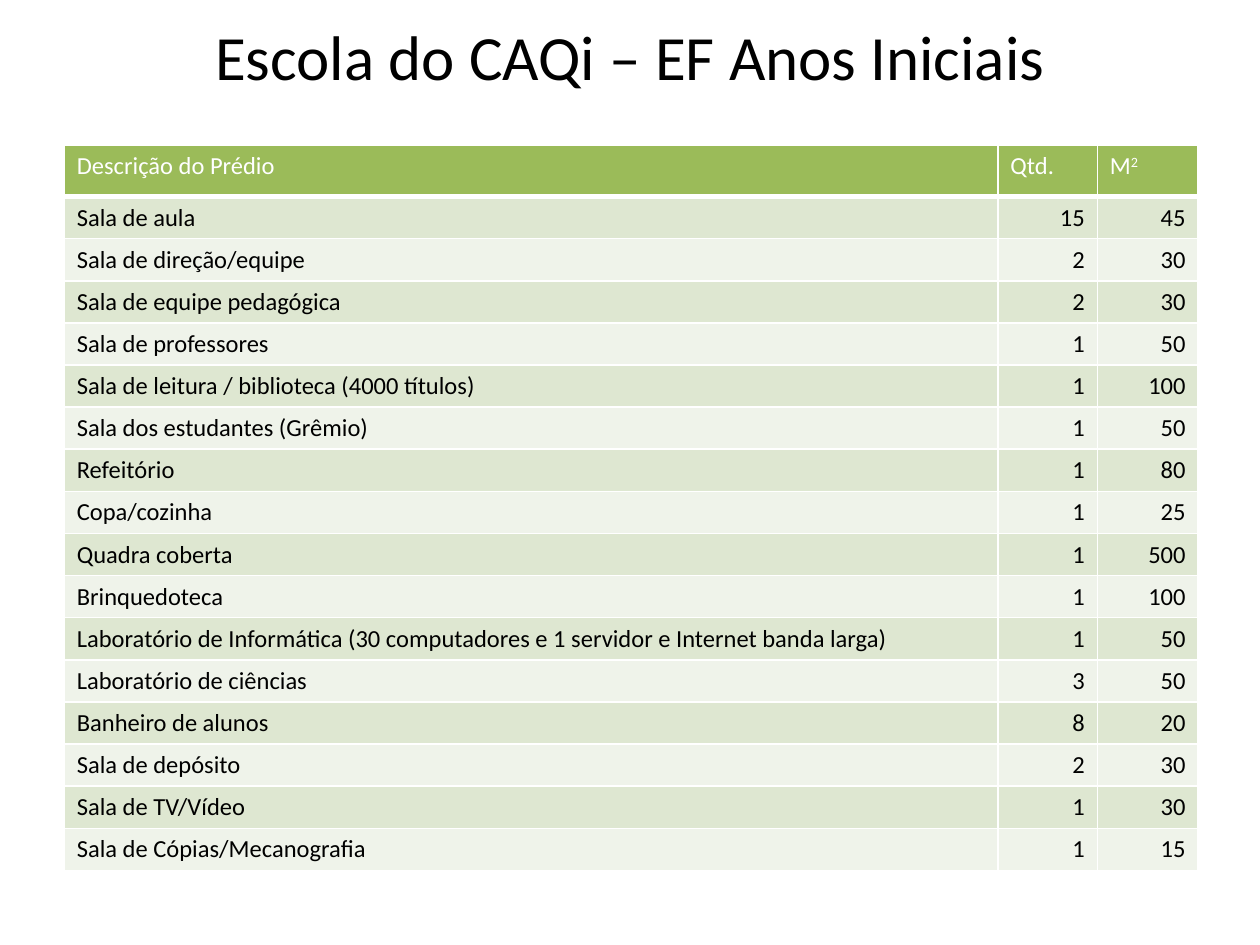
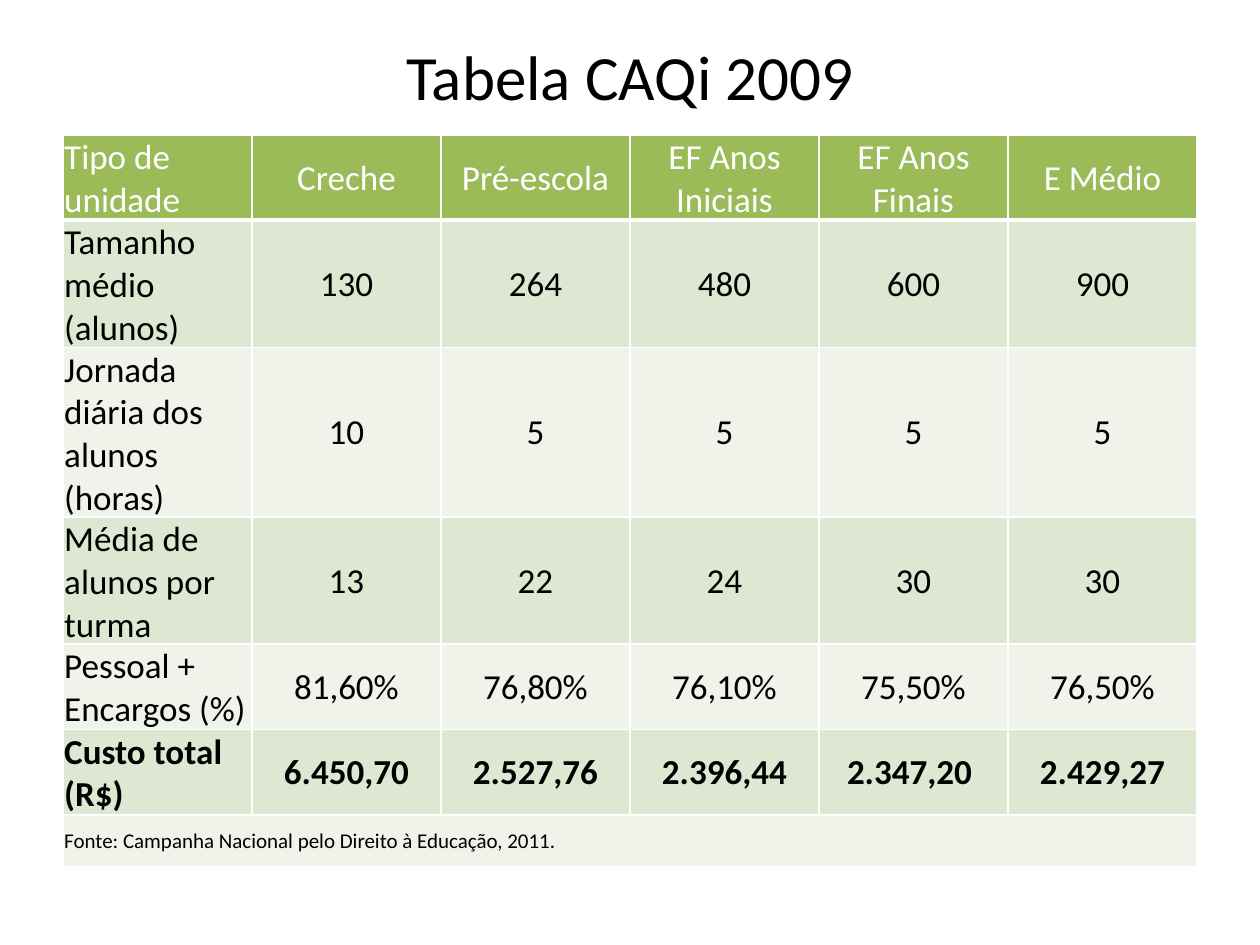
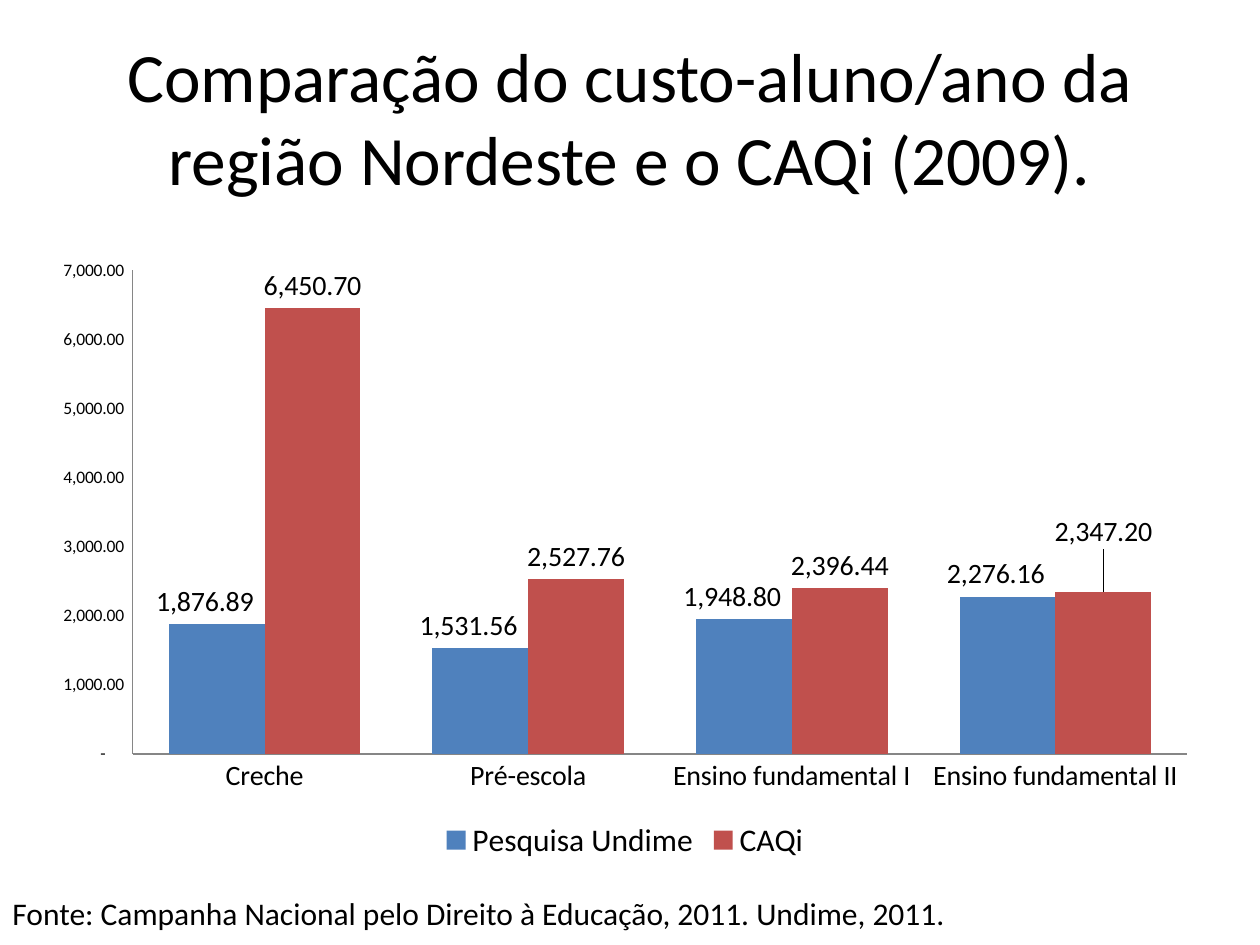
from dataclasses import dataclass

from lxml.etree import SubElement
from pptx import Presentation
from pptx.chart.data import CategoryChartData
from pptx.dml.color import RGBColor
from pptx.enum.chart import XL_CHART_TYPE, XL_LABEL_POSITION, XL_LEGEND_POSITION, XL_TICK_MARK
from pptx.enum.text import MSO_ANCHOR, PP_ALIGN
from pptx.oxml import parse_xml
from pptx.oxml.ns import nsdecls, qn
from pptx.util import Inches, Pt


@dataclass(frozen=True)
class Theme:
    font: str = "Calibri"
    text: str = "000000"
    white: str = "FFFFFF"
    header: str = "9BBB59"
    bands: tuple = ("DEE7D1", "EFF3EA")
    series: tuple = ("4F81BD", "C0504D")
    axis: str = "868686"
    title_size: float = 36
    long_title_size: float = 39.6
    rooms_size: float = 14
    costs_size: float = 20
    source_size: float = 12
    axis_size: float = 10
    label_size: float = 16
    caption_size: float = 18


THEME = Theme()
MONEY = '_(* #,##0.00_);_(* \\(#,##0.00\\);_(* "-"??_);_(@_)'

ROOMS = [
    ("Descrição do Prédio", "Qtd.", "M"),
    ("Sala de aula", "15", "45"),
    ("Sala de direção/equipe", "2", "30"),
    ("Sala de equipe pedagógica", "2", "30"),
    ("Sala de professores", "1", "50"),
    ("Sala de leitura / biblioteca (4000 títulos)", "1", "100"),
    ("Sala dos estudantes (Grêmio)", "1", "50"),
    ("Refeitório", "1", "80"),
    ("Copa/cozinha", "1", "25"),
    ("Quadra coberta", "1", "500"),
    ("Brinquedoteca", "1", "100"),
    ("Laboratório de Informática (30 computadores e 1 servidor e Internet banda larga)", "1", "50"),
    ("Laboratório de ciências", "3", "50"),
    ("Banheiro de alunos", "8", "20"),
    ("Sala de depósito", "2", "30"),
    ("Sala de TV/Vídeo", "1", "30"),
    ("Sala de Cópias/Mecanografia", "1", "15"),
]

COSTS = [
    ("Tipo de unidade", "Creche", "Pré-escola", "EF Anos Iniciais", "EF Anos Finais", "E Médio"),
    ("Tamanho médio (alunos)", "130", "264", "480", "600", "900"),
    ("Jornada diária dos alunos (horas)", "10", "5", "5", "5", "5"),
    ("Média de alunos por turma", "13", "22", "24", "30", "30"),
    ("Pessoal + Encargos (%)", "81,60%", "76,80%", "76,10%", "75,50%", "76,50%"),
    ("Custo total (R$)", "6.450,70", "2.527,76", "2.396,44", "2.347,20 ", "2.429,27"),
    ("Fonte: Campanha Nacional pelo Direito à Educação, 2011.", "", "", "", "", ""),
]

LEVELS = ("Creche", "Pré-escola", "Ensino fundamental I", "Ensino fundamental II")
COST_PER_PUPIL = {
    "Pesquisa Undime": (1876.89, 1531.56, 1948.8, 2276.16),
    "CAQi": (6450.7, 2527.76, 2396.44, 2347.2),
}
# Label shifts as fractions of the chart, by series and level
LABEL_SHIFTS = [
    {level: (-0.01, 0) for level in range(len(LEVELS))},
    {3: (0, -0.06)},
]


def style_font(font, size, color=THEME.text, bold=False):
    font.name = THEME.font
    font.size = Pt(size)
    font.bold = bold
    font.color.rgb = RGBColor.from_string(color)


def add_text(slide, text, box, size, align=PP_ALIGN.LEFT, anchor=MSO_ANCHOR.TOP):
    frame = slide.shapes.add_textbox(*map(Inches, box)).text_frame
    frame.word_wrap = True
    frame.vertical_anchor = anchor
    paragraph = frame.paragraphs[0]
    paragraph.text = text
    paragraph.alignment = align
    style_font(paragraph.font, size)


def add_title(slide, text, top, size=THEME.title_size):
    add_text(slide, text, (0.5, top, 9, 1.25), size, PP_ALIGN.CENTER, MSO_ANCHOR.MIDDLE)


def set_borders(cell, bottom_width):
    properties = cell._tc.get_or_add_tcPr()
    widths = {"lnL": 1, "lnR": 1, "lnT": 1, "lnB": bottom_width}
    for position, (side, width) in enumerate(widths.items()):
        properties.insert(position, parse_xml(
            f'<a:{side} {nsdecls("a")} w="{Pt(width)}"><a:solidFill>'
            f'<a:srgbClr val="{THEME.white}"/></a:solidFill></a:{side}>'))


def style_cell(cell, row, size, align, anchor, margins):
    is_header = row == 0
    cell.fill.solid()
    cell.fill.fore_color.rgb = RGBColor.from_string(
        THEME.header if is_header else THEME.bands[(row - 1) % 2])
    set_borders(cell, 3 if is_header else 1)
    cell.vertical_anchor = anchor
    cell.margin_left, cell.margin_top, cell.margin_right, cell.margin_bottom = map(Inches, margins)
    paragraph = cell.text_frame.paragraphs[0]
    paragraph.alignment = align
    style_font(paragraph.font, size, THEME.white if is_header else THEME.text)


def add_banded_table(slide, rows, corner, widths, heights, size, header_align, value_align,
                     anchor, margins):
    """Add a table whose first column is left-aligned text and the others values."""
    table = slide.shapes.add_table(
        len(rows), len(widths), *map(Inches, (*corner, sum(widths), sum(heights)))).table
    table.first_row = table.horz_banding = False
    for column, width in zip(table.columns, widths):
        column.width = Inches(width)
    for row, (texts, height) in enumerate(zip(rows, heights)):
        table.rows[row].height = Inches(height)
        for column, text in enumerate(texts):
            cell = table.cell(row, column)
            cell.text = text
            align = PP_ALIGN.LEFT if column == 0 else value_align if row else header_align
            style_cell(cell, row, size, align, anchor, margins)
    return table


def add_superscript(paragraph, text):
    run = paragraph.add_run()
    run.text = text
    run._r.get_or_add_rPr().set("baseline", "30000")


def set_layout(layout, **settings):
    manual = SubElement(layout, qn("c:manualLayout"))
    for tag, value in settings.items():
        SubElement(manual, qn(f"c:{tag}")).set("val", str(value))


def new_layout():
    return parse_xml(f'<c:layout {nsdecls("c")}/>')


def place_plot(chart):
    plot_area = chart.element.find(f".//{qn('c:plotArea')}")
    for automatic in plot_area.findall(qn("c:layout")):
        plot_area.remove(automatic)
    layout = new_layout()
    plot_area.insert(0, layout)
    set_layout(layout, layoutTarget="inner", xMode="edge", yMode="edge",
               x=0.08, y=0.04, w=0.9, h=0.78)


def label_series(series, shifts):
    labels = series.data_labels
    labels.show_value = True
    labels.number_format = MONEY
    labels.number_format_is_linked = False
    labels.position = XL_LABEL_POSITION.OUTSIDE_END
    style_font(labels.font, THEME.label_size)
    for level in shifts:
        label = series.points[level].data_label
        style_font(label.font, THEME.label_size)
        label.position = XL_LABEL_POSITION.OUTSIDE_END


def shift_labels(chart):
    for series, shifts in zip(chart.element.iter(qn("c:ser")), LABEL_SHIFTS):
        for label, (x, y) in zip(series.iter(qn("c:dLbl")), shifts.values()):
            layout = new_layout()
            label.insert(1, layout)
            set_layout(layout, x=x, y=y)


def style_axis(axis, size):
    axis.has_major_gridlines = False
    axis.major_tick_mark = axis.minor_tick_mark = XL_TICK_MARK.NONE
    axis.format.line.color.rgb = RGBColor.from_string(THEME.axis)
    style_font(axis.tick_labels.font, size)


def add_cost_chart(slide):
    data = CategoryChartData(number_format=MONEY)
    data.categories = LEVELS
    for name, values in COST_PER_PUPIL.items():
        data.add_series(name, values)
    chart = slide.shapes.add_chart(
        XL_CHART_TYPE.COLUMN_CLUSTERED, *map(Inches, (0.31, 1.95, 9.3, 4.92)), data).chart
    style_font(chart.font, THEME.axis_size)
    chart.has_title = False
    chart.has_legend = True
    chart.legend.position = XL_LEGEND_POSITION.BOTTOM
    chart.legend.include_in_layout = False
    style_font(chart.legend.font, THEME.caption_size)

    style_axis(chart.category_axis, THEME.label_size)
    style_axis(chart.value_axis, THEME.axis_size)
    chart.value_axis.minimum_scale = 0
    chart.value_axis.maximum_scale = 7000
    chart.value_axis.major_unit = 1000
    chart.value_axis.tick_labels.number_format = MONEY
    chart.value_axis.tick_labels.number_format_is_linked = False

    plot = chart.plots[0]
    plot.gap_width = 75
    plot.overlap = 0
    plot.vary_by_categories = False
    for series, color, shifts in zip(plot.series, THEME.series, LABEL_SHIFTS):
        series.format.fill.solid()
        series.format.fill.fore_color.rgb = RGBColor.from_string(color)
        label_series(series, shifts)
    shift_labels(chart)
    place_plot(chart)


def build_rooms_slide(slide):
    add_title(slide, "Escola do CAQi – EF Anos Iniciais", -0.19)
    body_rows = len(ROOMS) - 1
    table = add_banded_table(
        slide, ROOMS, (0.51, 1.15), (7.41, 0.79, 0.8), [0.41] + [5.35 / body_rows] * body_rows,
        THEME.rooms_size, PP_ALIGN.LEFT, PP_ALIGN.RIGHT, MSO_ANCHOR.TOP, (0.1, 0.05, 0.1, 0.05))
    add_superscript(table.cell(0, 2).text_frame.paragraphs[0], "2")


def build_costs_slide(slide):
    add_title(slide, "Tabela CAQi 2009", -0.03)
    table = add_banded_table(
        slide, COSTS, (0.5, 1.07), [1.5] * 6, (0.67, 1.01, 1.34, 1.01, 0.67, 0.67, 0.41),
        THEME.costs_size, PP_ALIGN.CENTER, PP_ALIGN.CENTER, MSO_ANCHOR.MIDDLE,
        (0.01, 0.01, 0.01, 0))
    total_row, source_row = len(COSTS) - 2, len(COSTS) - 1
    for column in range(len(COSTS[0])):
        table.cell(total_row, column).text_frame.paragraphs[0].font.bold = True
        table.cell(source_row, column).text_frame.paragraphs[0].font.size = Pt(THEME.source_size)
    table.cell(source_row, 0).merge(table.cell(source_row, len(COSTS[0]) - 1))


def build_comparison_slide(slide):
    add_title(slide, "Comparação do custo-aluno/ano da região Nordeste e o CAQi (2009).",
              0.3, THEME.long_title_size)
    add_cost_chart(slide)
    add_text(slide, "Fonte: Campanha Nacional pelo Direito à Educação, 2011. Undime, 2011.",
             (0, 7.05, 8.15, 0.4), THEME.caption_size)


def main():
    presentation = Presentation()
    presentation.slide_width = Inches(10)
    presentation.slide_height = Inches(7.5)
    blank = presentation.slide_layouts[6]
    for build in (build_rooms_slide, build_costs_slide, build_comparison_slide):
        build(presentation.slides.add_slide(blank))
    presentation.save("out.pptx")


if __name__ == "__main__":
    main()
